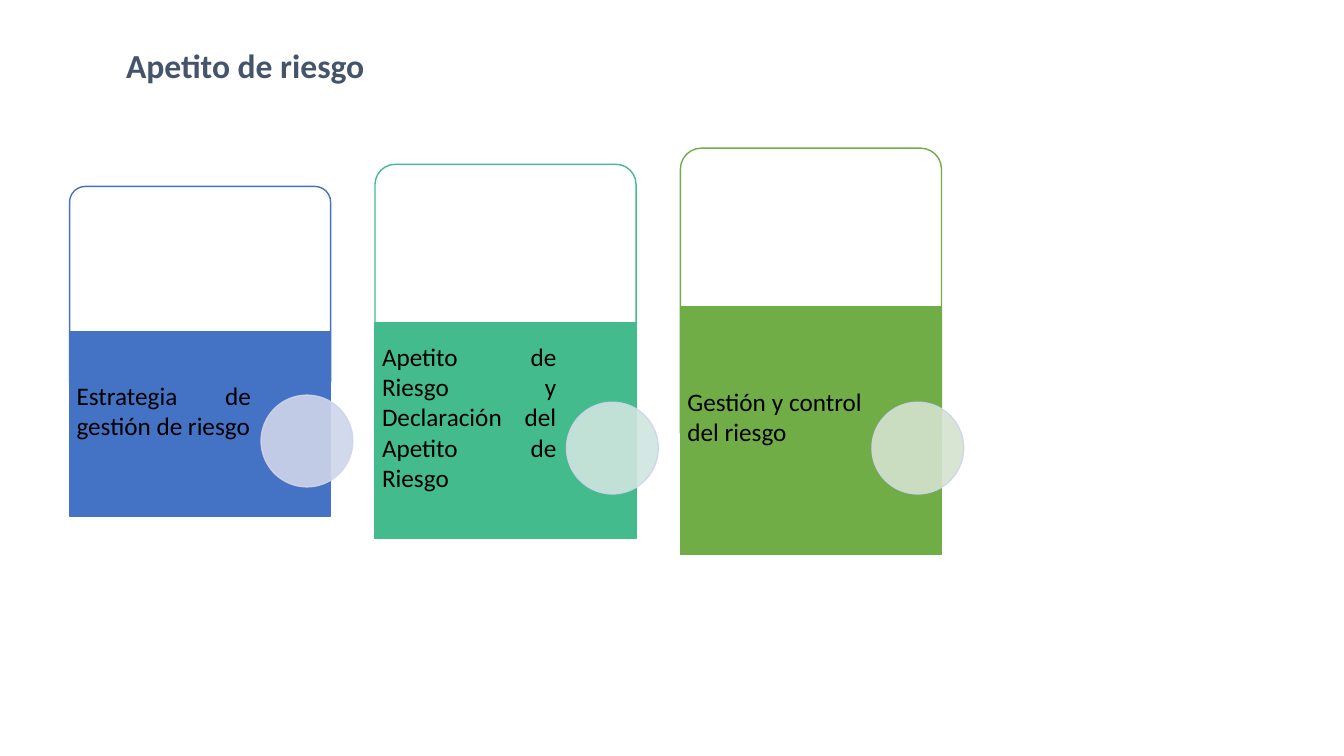
from pptx import Presentation
from pptx.dml.color import RGBColor
from pptx.enum.shapes import MSO_SHAPE as SHAPE
from pptx.enum.text import MSO_ANCHOR as ANCHOR, MSO_AUTO_SIZE as AUTO, PP_ALIGN as ALIGN
from pptx.oxml.ns import qn
from pptx.util import Inches, Pt
from lxml import etree


def rgb(value):
    return RGBColor.from_string(value)


class Deck:
    """Style and current slide; lengths are cells of a 0.1 inch grid."""
    FONT = "Calibri"
    INK = "000000"
    TITLE_INK = "44546A"
    CELL = Inches(0.1)

    def __init__(self, columns, rows):
        self.prs = Presentation()
        self.prs.slide_width, self.prs.slide_height = self.cells(columns, rows)
        self.s = self.prs.slides.add_slide(self.prs.slide_layouts[5])
        self.shapes = self.s.shapes

    def cells(self, *counts):
        return [round(n * self.CELL) for n in counts]

    def start_group(self):
        self.shapes = self.s.shapes.add_group_shape().shapes

    def style(self, p, size, color, bold=False):
        for r in p.runs:
            r.font.name = self.FONT
            r.font.size = Pt(size)
            r.font.bold = bold
            r.font.color.rgb = rgb(color)

    def paint(self, fill, color, alpha=100):
        fill.solid()
        fill.fore_color.rgb = rgb(color)
        if alpha < 100:
            clr = fill._xPr.find(qn("a:solidFill"))[0]
            etree.SubElement(clr, qn("a:alpha")).set("val", str(alpha * 1000))

    def title(self, text, *box):
        sp = self.s.shapes.title
        sp.left, sp.top, sp.width, sp.height = self.cells(*box)
        tf = sp.text_frame
        tf.text = text
        tf.auto_size = AUTO.SHAPE_TO_FIT_TEXT
        p = tf.paragraphs[0]
        p.alignment = ALIGN.LEFT
        p.line_spacing = 0.9
        self.style(p, 24, self.TITLE_INK, bold=True)

    def shape(self, kind, box, fill, line, alpha=100, line_alpha=100):
        sp = self.shapes.add_shape(kind, *self.cells(*box))
        sp.shadow.inherit = False
        self.paint(sp.fill, fill, alpha)
        self.paint(sp.line.fill, line, line_alpha)
        sp.line.width = Pt(1)
        return sp

    def label(self, text, box):
        tf = self.shapes.add_textbox(*self.cells(*box)).text_frame
        tf.word_wrap = True
        tf.vertical_anchor = ANCHOR.MIDDLE
        tf.margin_left, tf.margin_top, tf.margin_right, tf.margin_bottom = self.cells(
            0.7, 0, 0.3, 2.7)
        tf.text = text
        p = tf.paragraphs[0]
        p.alignment = ALIGN.JUSTIFY
        self.style(p, 18, self.INK)

    def card(self, column, text, color, tint, panel, band, dot_top):
        left = 6.9 + column * 30.3
        width, label_width, dot = 25.9, 18.3, 9.1
        # Rounded panel
        sp = self.shape(SHAPE.ROUND_2_SAME_RECTANGLE, (left, panel[0], width, panel[1]),
                        "FFFFFF", color, alpha=90)
        sp.adjustments[0], sp.adjustments[1] = 0.08, 0
        # Coloured band with its label
        top, height = band
        self.shape(SHAPE.RECTANGLE, (left, top, width, height), color, color)
        self.label(text, (left, top, label_width, height))
        # Dot over the right edge
        self.shape(SHAPE.OVAL, (left + 19, dot_top, dot, dot), tint, "CFD5EA",
                   alpha=90, line_alpha=90)


# Text, colour, dot tint, panel and band (top, height), dot top
CARDS = [
    ("Estrategia de gestión de riesgo", "4472C4", "CFD5EA",
     (18.5, 19.4), (32.9, 18.3), 39.2),
    ("Apetito de Riesgo y Declaración del Apetito de Riesgo", "43BB8D", "CFE6E0",
     (16.3, 25.1), (32, 21.4), 39.9),
    ("Gestión y control del riesgo", "70AD47", "D5E3CF",
     (14.7, 28.3), (30.4, 24.6), 39.9),
]


def main():
    deck = Deck(133.33, 75)
    deck.title("Apetito de riesgo", 11.5, 4.4, 115, 4.6)
    deck.start_group()
    for column, card in enumerate(CARDS):
        deck.card(column, *card)
    deck.prs.save("out.pptx")


if __name__ == "__main__":
    main()
